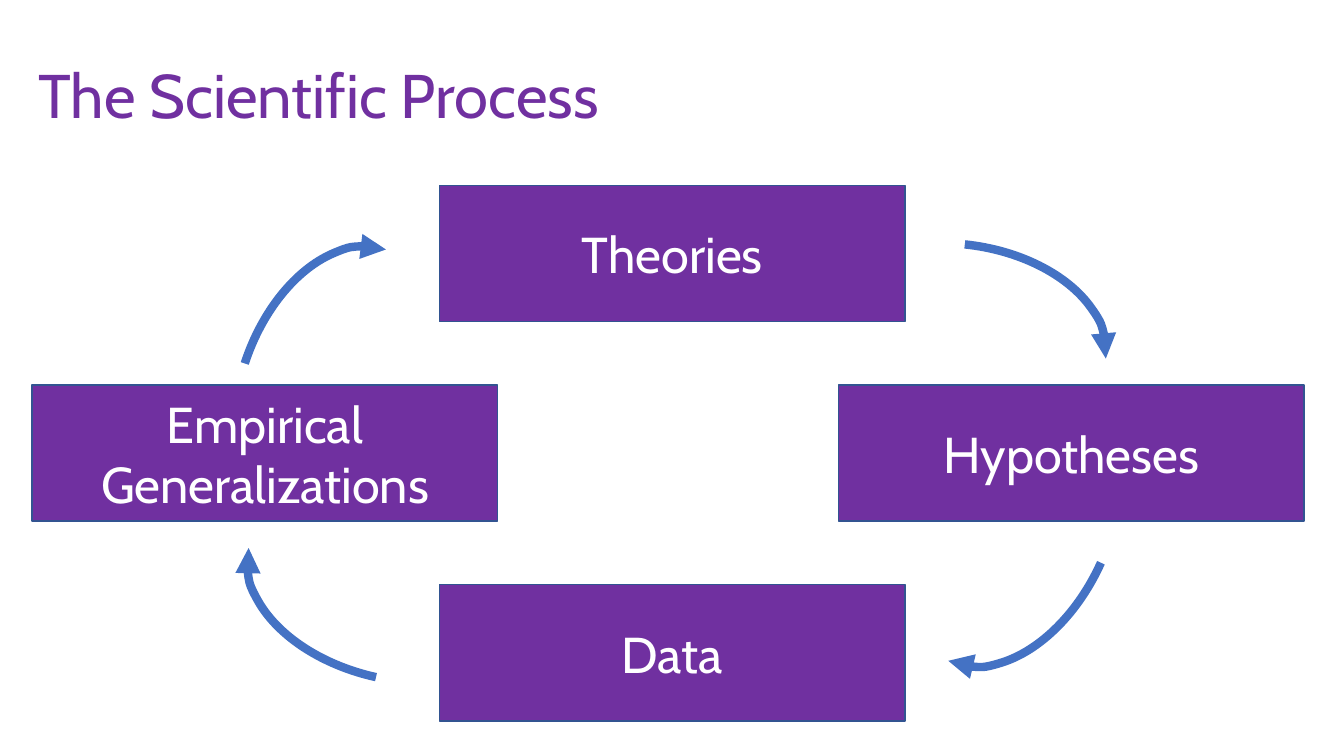
from lxml import etree
from pptx import Presentation
from pptx.dml.color import RGBColor
from pptx.enum import shapes, text
from pptx.oxml import ns
from pptx.util import Pt

COLOURS = {"purple": "7030A0", "outline": "325491", "arrow": "4472C4", "white": "FFFFFF"}
FONT = "Cabin"
STAGE_WIDTH, STAGE_HEIGHT = 332.6, 97.2
ARC_WIDTH, ARC_HEIGHT = 217.4, 141.1
MIDDLE_LEFT = 313.9
STAGE_TOP, STAGE_STEP = 132.5, 142.6
SIDE_TOP = STAGE_TOP + STAGE_STEP
STAGES = [
    ("Theories", MIDDLE_LEFT, STAGE_TOP),
    ("Hypotheses", 599, SIDE_TOP),
    ("Data", MIDDLE_LEFT, SIDE_TOP + STAGE_STEP),
    ("Empirical Generalizations", 23, SIDE_TOP),
]
ARROWS = [
    (573.1, 174.2, 6),
    (613.4, 302.4, 114.3),
    (175, 344.2, 192.4),
    (133.2, 211, 288.1),
]


def colour(name):
    return RGBColor.from_string(COLOURS[name])


def write(box, words, size, colour_name, alignment):
    frame = box.text_frame
    frame.word_wrap = True
    frame.vertical_anchor = text.MSO_ANCHOR.MIDDLE
    para = frame.paragraphs[0]
    para.alignment = alignment
    span = para.add_run()
    span.text = words
    span.font.name = FONT
    span.font.size = Pt(size)
    span.font.color.rgb = colour(colour_name)
    return para


def add_title(page, words):
    box = page.shapes.add_textbox(Pt(20.2), Pt(18), Pt(919.4), Pt(104.4))
    para = write(box, words, 44, "purple", text.PP_ALIGN.LEFT)
    para.line_spacing = 0.9


def add_outlined(page, kind, left, top, width, height, line_colour, line_width):
    shape = page.shapes.add_shape(kind, Pt(left), Pt(top), Pt(width), Pt(height))
    shape.shadow.inherit = False
    shape.line.color.rgb = colour(line_colour)
    shape.line.width = Pt(line_width)
    return shape


def add_stage(page, words, left, top):
    box = add_outlined(page, shapes.MSO_SHAPE.RECTANGLE, left, top,
                       STAGE_WIDTH, STAGE_HEIGHT, "outline", 1)
    box.fill.solid()
    box.fill.fore_color.rgb = colour("purple")
    write(box, words, 36, "white", text.PP_ALIGN.CENTER)


def add_arc_arrow(page, left, top, rotation):
    arc = add_outlined(page, shapes.MSO_SHAPE.ARC, left, top,
                       ARC_WIDTH, ARC_HEIGHT, "arrow", 6)
    arc.fill.background()
    arc.rotation = rotation
    line = arc.element.spPr.find(ns.qn("a:ln"))
    etree.SubElement(line, ns.qn("a:tailEnd"), type="triangle")


def main():
    deck = Presentation()
    deck.slide_width, deck.slide_height = Pt(960), Pt(540)
    page = deck.slides.add_slide(deck.slide_layouts[6])
    add_title(page, "The Scientific Process")
    for stage in STAGES:
        add_stage(page, *stage)
    for arrow in ARROWS:
        add_arc_arrow(page, *arrow)
    deck.save("out.pptx")


if __name__ == "__main__":
    main()
